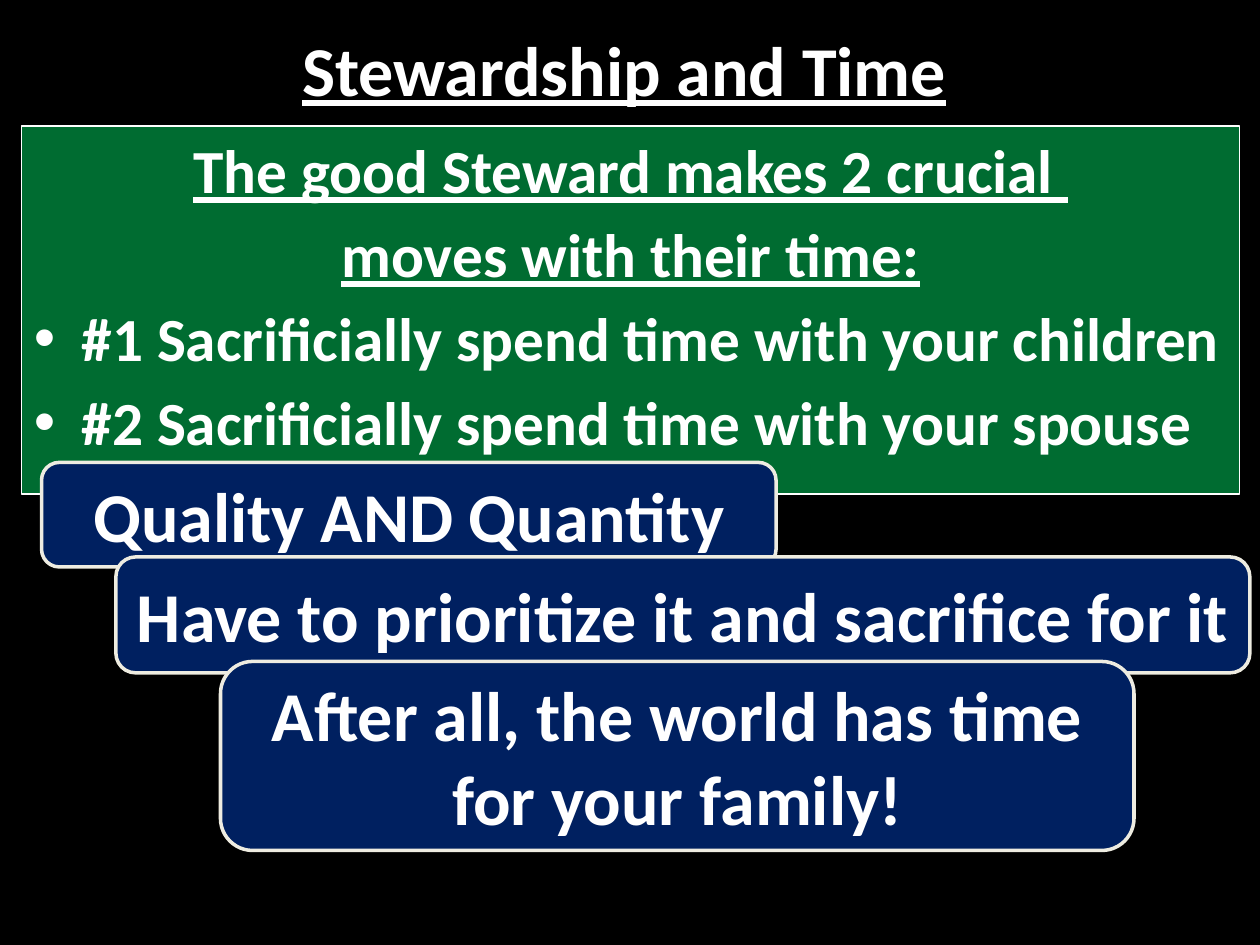
import pptx
import pptx.util
import pptx.dml.color
import pptx.enum.shapes
import pptx.enum.text
import pptx.oxml.ns
from lxml import etree

Inches = pptx.util.Inches
Pt = pptx.util.Pt
RGBColor = pptx.dml.color.RGBColor
SHAPE = pptx.enum.shapes.MSO_SHAPE
ALIGN = pptx.enum.text.PP_ALIGN
ANCHOR = pptx.enum.text.MSO_ANCHOR
qn = pptx.oxml.ns.qn

BLACK = RGBColor(0x00, 0x00, 0x00)
WHITE = RGBColor(0xFF, 0xFF, 0xFF)
GREEN = RGBColor(0x00, 0x6C, 0x31)
NAVY = RGBColor(0x00, 0x20, 0x60)
CREAM = RGBColor(0xEE, 0xEC, 0xE1)

FONT = {"name": "Calibri", "size": Pt(40), "bold": True, "underline": False}
HEADING = {**FONT, "underline": True}
POINT = {**FONT, "size": Pt(35)}
LEAD = {**POINT, "underline": True}


def write(p, text, style, align=ALIGN.CENTER):
    p.alignment = align
    r = p.add_run()
    r.text = text
    for name, value in style.items():
        setattr(r.font, name, value)
    r.font.color.rgb = WHITE


def add_panel(s, kind, box, fill, line, width):
    sp = s.shapes.add_shape(kind, *map(Inches, box))
    sp.shadow.inherit = False
    sp.fill.solid()
    sp.fill.fore_color.rgb = fill
    sp.line.color.rgb = line
    sp.line.width = Pt(width)
    sp.text_frame.word_wrap = True
    return sp


def add_title(s, box, text):
    tf = s.shapes.add_textbox(*map(Inches, box)).text_frame
    tf.word_wrap = True
    tf.vertical_anchor = ANCHOR.MIDDLE
    write(tf.paragraphs[0], text, HEADING)


def add_moves(s, box, leads, points):
    tf = add_panel(s, SHAPE.RECTANGLE, box, GREEN, WHITE, 0.75).text_frame
    tf.vertical_anchor = ANCHOR.TOP
    for i, text in enumerate(leads + points):
        p = tf.paragraphs[0] if i == 0 else tf.add_paragraph()
        is_lead = i < len(leads)
        write(p, text, LEAD if is_lead else POINT, ALIGN.CENTER if is_lead else ALIGN.LEFT)
        p.space_before = Pt(6)
        pPr = p._p.get_or_add_pPr()
        pPr.set("marL", str(Inches(0.38)))
        pPr.set("indent", str(Inches(-0.38)))
        if is_lead:
            etree.SubElement(pPr, qn("a:buNone"))
        else:
            etree.SubElement(pPr, qn("a:buFont")).set("typeface", "Arial")
            etree.SubElement(pPr, qn("a:buChar")).set("char", "•")


def add_callout(s, box, text):
    sp = add_panel(s, SHAPE.ROUNDED_RECTANGULAR_CALLOUT, box, NAVY, CREAM, 2)
    for i, value in enumerate((-0.22, 0.5, 0.17)):
        sp.adjustments[i] = value
    sp.text_frame.vertical_anchor = ANCHOR.MIDDLE
    write(sp.text_frame.paragraphs[0], text, FONT)


def main():
    prs = pptx.Presentation()
    prs.slide_width, prs.slide_height = Inches(10), Inches(7.5)
    s = prs.slides.add_slide(prs.slide_layouts[6])
    s.background.fill.solid()
    s.background.fill.fore_color.rgb = BLACK
    add_moves(
        s,
        (0.17, 1, 9.67, 2.92),
        ["The good Steward makes 2 crucial ", "moves with their time:"],
        [
            "#1 Sacrificially spend time with your children",
            "#2 Sacrificially spend time with your spouse",
        ],
    )
    add_title(s, (0.08, 0.08, 9.75, 0.92), "Stewardship and Time")
    for box, text in (
        ((0.33, 3.67, 5.83, 0.83), "Quality AND Quantity"),
        ((0.92, 4.42, 9, 0.92), "Have to prioritize it and sacrifice for it"),
        ((1.75, 5.25, 7.25, 1.5), "After all, the world has time for your family!"),
    ):
        add_callout(s, box, text)
    prs.save("out.pptx")


if __name__ == "__main__":
    main()
